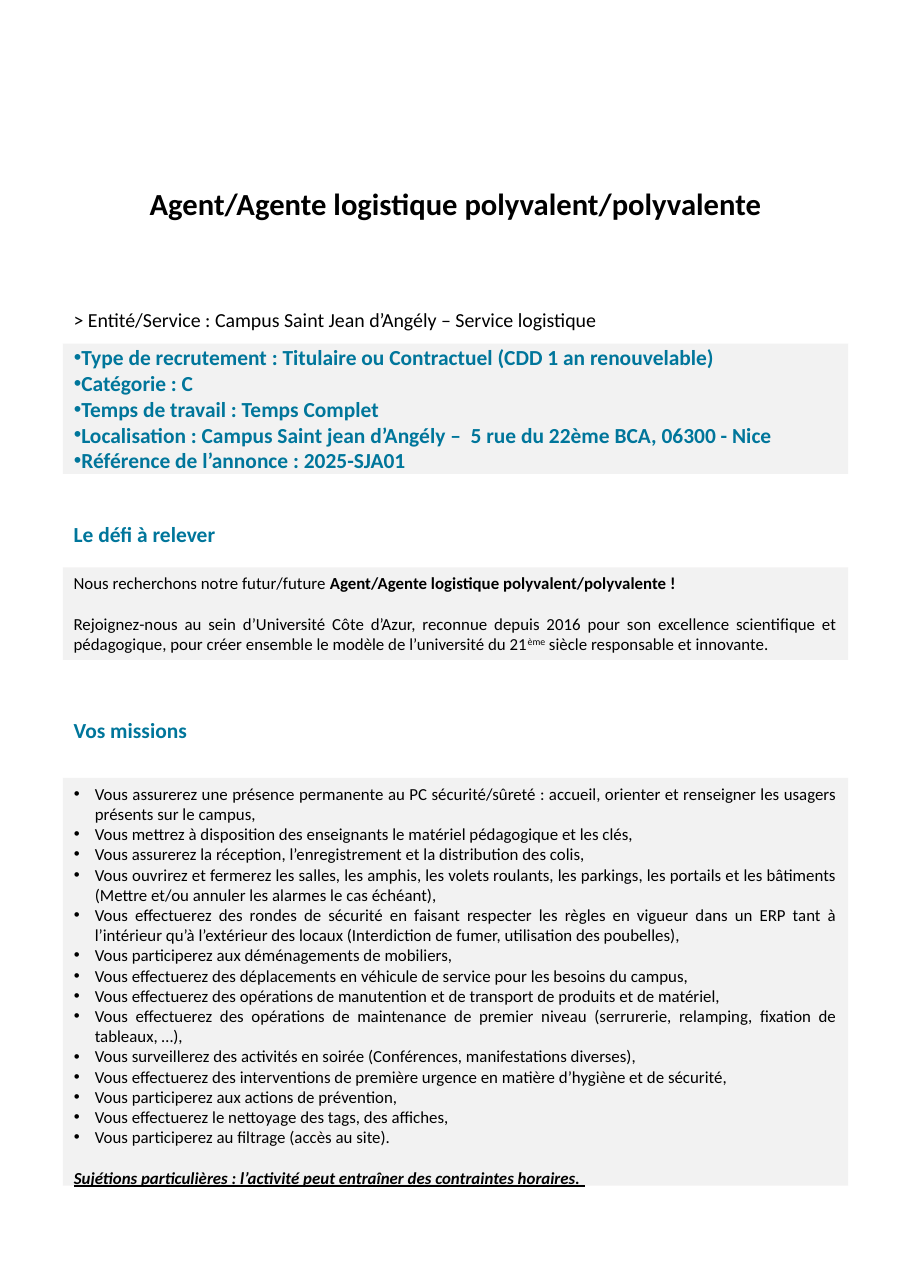
from lxml.etree import SubElement
from pptx import Presentation
from pptx.dml.color import RGBColor
from pptx.enum.shapes import MSO_SHAPE
from pptx.enum.text import MSO_ANCHOR, MSO_AUTO_SIZE, PP_ALIGN
from pptx.oxml.ns import qn
from pptx.util import Inches, Pt

BLACK = RGBColor(0x00, 0x00, 0x00)
TEAL = RGBColor(0x00, 0x76, 0x9B)
PANEL_GREY = RGBColor(0xE7, 0xE6, 0xE6)
FONT = "Calibri"
LEFT, WIDTH = 0.57, 7.13
BLANK_LINE = 13.4

JOB_TITLE = "Agent/Agente logistique polyvalent/polyvalente"
JOB_FACTS = [
    "Type de recrutement : Titulaire ou Contractuel (CDD 1 an renouvelable)",
    "Catégorie : C",
    "Temps de travail : Temps Complet",
    "Localisation : Campus Saint jean d’Angély –  5 rue du 22ème BCA, 06300 - Nice",
    "Référence de l’annonce : 2025-SJA01",
]
MISSIONS = [
    "Vous assurerez une présence permanente au PC sécurité/sûreté : accueil, orienter et "
    "renseigner les usagers présents sur le campus,",
    "Vous mettrez à disposition des enseignants le matériel pédagogique et les clés,",
    "Vous assurerez la réception, l’enregistrement et la distribution des colis,",
    "Vous ouvrirez et fermerez les salles, les amphis, les volets roulants, les parkings, "
    "les portails et les bâtiments (Mettre et/ou annuler les alarmes le cas échéant),",
    "Vous effectuerez des rondes de sécurité en faisant respecter les règles en vigueur dans "
    "un ERP tant à l’intérieur qu’à l’extérieur des locaux (Interdiction de fumer, "
    "utilisation des poubelles),",
    "Vous participerez aux déménagements de mobiliers,",
    "Vous effectuerez des déplacements en véhicule de service pour les besoins du campus,",
    "Vous effectuerez des opérations de manutention et de transport de produits et de matériel,",
    "Vous effectuerez des opérations de maintenance de premier niveau (serrurerie, relamping, "
    "fixation de tableaux, …),",
    "Vous surveillerez des activités en soirée (Conférences, manifestations diverses),",
    "Vous effectuerez des interventions de première urgence en matière d’hygiène et de sécurité,",
    "Vous participerez aux actions de prévention,",
    "Vous effectuerez le nettoyage des tags, des affiches,",
    "Vous participerez au filtrage (accès au site).",
]


def write_text(paragraph, text, size=11, color=BLACK, bold=False, italic=False,
               underline=False, superscript=False):
    run = paragraph.add_run()
    run.text = text
    font = run.font
    font.name, font.size = FONT, Pt(size)
    font.bold, font.italic, font.underline = bold, italic, underline
    font.color.rgb = color
    if superscript:
        run._r.get_or_add_rPr().set("baseline", "30000")


class JobSheet:
    def __init__(self, slide):
        self.slide = slide

    def place(self, shape, top, height, anchor=MSO_ANCHOR.TOP):
        shape.left, shape.top = Inches(LEFT), Inches(top)
        shape.width, shape.height = Inches(WIDTH), Inches(height)
        frame = shape.text_frame
        frame.word_wrap = True
        frame.auto_size = MSO_AUTO_SIZE.SHAPE_TO_FIT_TEXT
        frame.vertical_anchor = anchor
        return frame

    def shade(self, shape):
        """Fill with half-transparent grey and no outline."""
        shape.fill.solid()
        shape.fill.fore_color.rgb = PANEL_GREY
        grey = shape._element.spPr.find(qn("a:solidFill"))[0]
        SubElement(grey, qn("a:alpha"), val="50000")
        shape.line.fill.background()

    def paragraph(self, frame, align=PP_ALIGN.LEFT, before=0, bullet=False,
                  margin=0, hanging=0):
        """Return the empty first paragraph, or a new one after existing text."""
        first = frame.paragraphs[0]
        paragraph = frame.add_paragraph() if first.runs else first
        properties = paragraph._p.get_or_add_pPr()
        properties.set("marL", str(Inches(margin)))
        properties.set("indent", str(-Inches(hanging)))
        if bullet:
            SubElement(properties, qn("a:buFont"), typeface="Arial")
            SubElement(properties, qn("a:buChar"), char="•")
        else:
            SubElement(properties, qn("a:buNone"))
        paragraph.alignment = align
        paragraph.line_spacing = 1.0
        paragraph.space_before = Pt(before)
        paragraph.space_after = Pt(0)
        return paragraph

    def title(self, text, top, height):
        frame = self.place(self.slide.shapes.title, top, height)
        heading = self.paragraph(frame, PP_ALIGN.CENTER)
        heading.line_spacing = 1.02
        write_text(heading, text, size=20, bold=True)

    def label(self, text, top, height, **style):
        box = self.slide.shapes.add_textbox(0, 0, 0, 0)
        write_text(self.paragraph(self.place(box, top, height)), text, **style)

    def section(self, text, top):
        self.label(text, top, 0.34, size=14, color=TEAL, bold=True)

    def panel(self, top, height):
        panel = self.slide.shapes.add_shape(MSO_SHAPE.RECTANGLE, 0, 0, 0, 0)
        panel.shadow.inherit = False
        self.shade(panel)
        return self.place(panel, top, height)

    def bullet_list(self, index, items, top, height, anchor=MSO_ANCHOR.TOP,
                    align=PP_ALIGN.LEFT, margin=0, hanging=0, **style):
        body = self.slide.placeholders[index]
        self.shade(body)
        frame = self.place(body, top, height, anchor)
        for item in items:
            bullet = self.paragraph(frame, align, bullet=True, margin=margin, hanging=hanging)
            write_text(bullet, item, **style)
        return frame


def main():
    deck = Presentation()
    deck.slide_width, deck.slide_height = Inches(8.27), Inches(11.69)
    two_content = deck.slide_layouts[3]
    sheet = JobSheet(deck.slides.add_slide(two_content))

    sheet.title(JOB_TITLE, 1.62, 0.43)
    sheet.label("> Entité/Service : Campus Saint Jean d’Angély – Service logistique",
                2.74, 0.32, size=13)
    sheet.bullet_list(1, JOB_FACTS, 3.07, 1.28, MSO_ANCHOR.MIDDLE, hanging=0.31,
                      size=14, color=TEAL, bold=True)

    sheet.section("Le défi à relever", 4.68)
    challenge = sheet.panel(5.15, 0.84)
    search = sheet.paragraph(challenge, PP_ALIGN.JUSTIFY)
    write_text(search, "Nous recherchons notre futur/future ")
    write_text(search, JOB_TITLE + " ! ", bold=True)
    invitation = sheet.paragraph(challenge, PP_ALIGN.JUSTIFY, before=BLANK_LINE)
    write_text(invitation, "Rejoignez-nous au sein d’Université Côte d’Azur, reconnue depuis "
               "2016 pour son excellence scientifique et pédagogique, pour créer ensemble "
               "le modèle de l’université du 21")
    write_text(invitation, "ème", superscript=True)
    write_text(invitation, " siècle responsable et innovante.")

    sheet.section("Vos missions", 6.46)
    missions = sheet.bullet_list(2, MISSIONS, 7.06, 3.8, align=PP_ALIGN.JUSTIFY,
                                 margin=0.19, hanging=0.19)
    constraints = sheet.paragraph(missions, PP_ALIGN.JUSTIFY, before=BLANK_LINE)
    write_text(constraints, "Sujétions particulières : l’activité peut entraîner des "
               "contraintes horaires. ", bold=True, italic=True, underline=True)

    deck.save("out.pptx")


if __name__ == "__main__":
    main()
